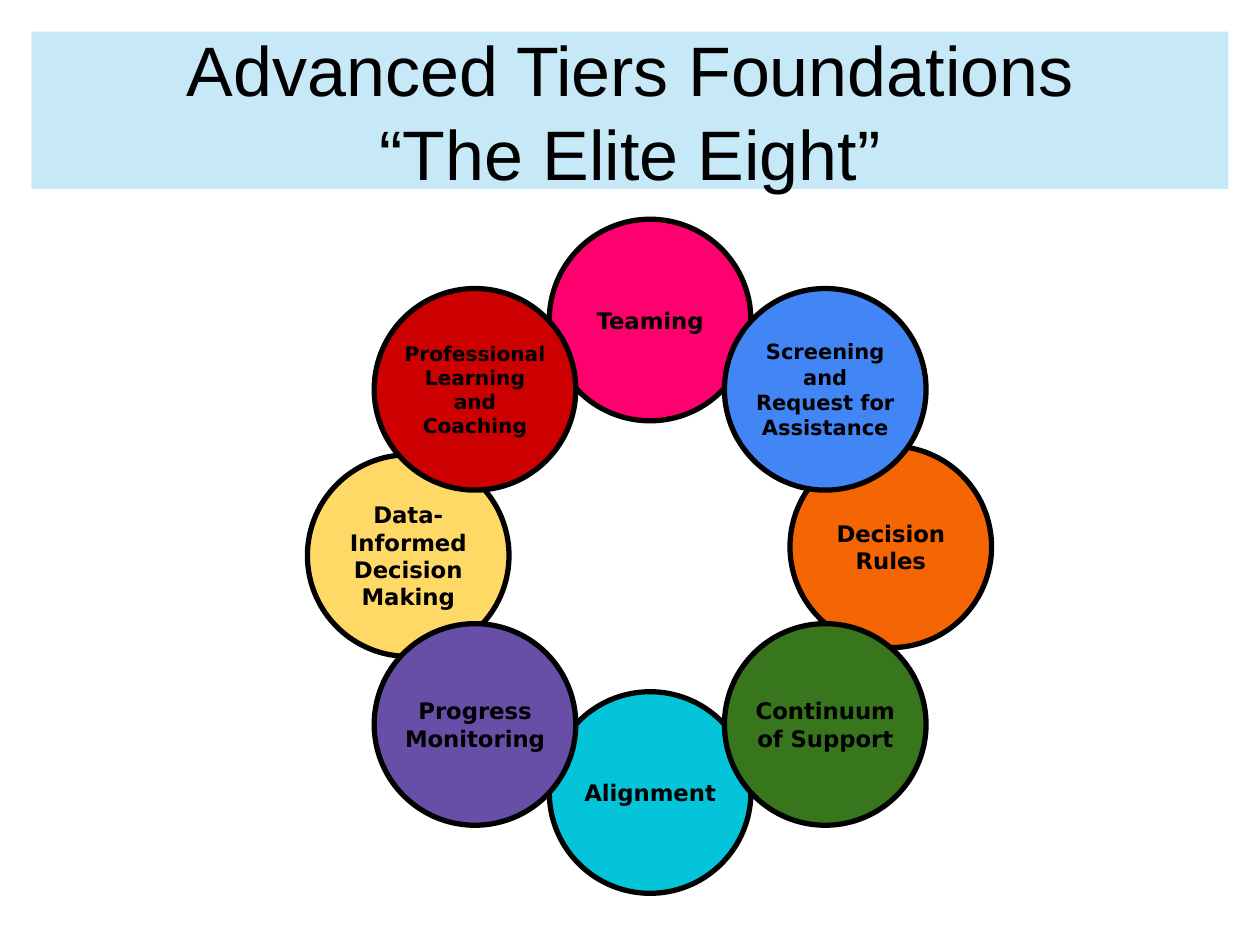
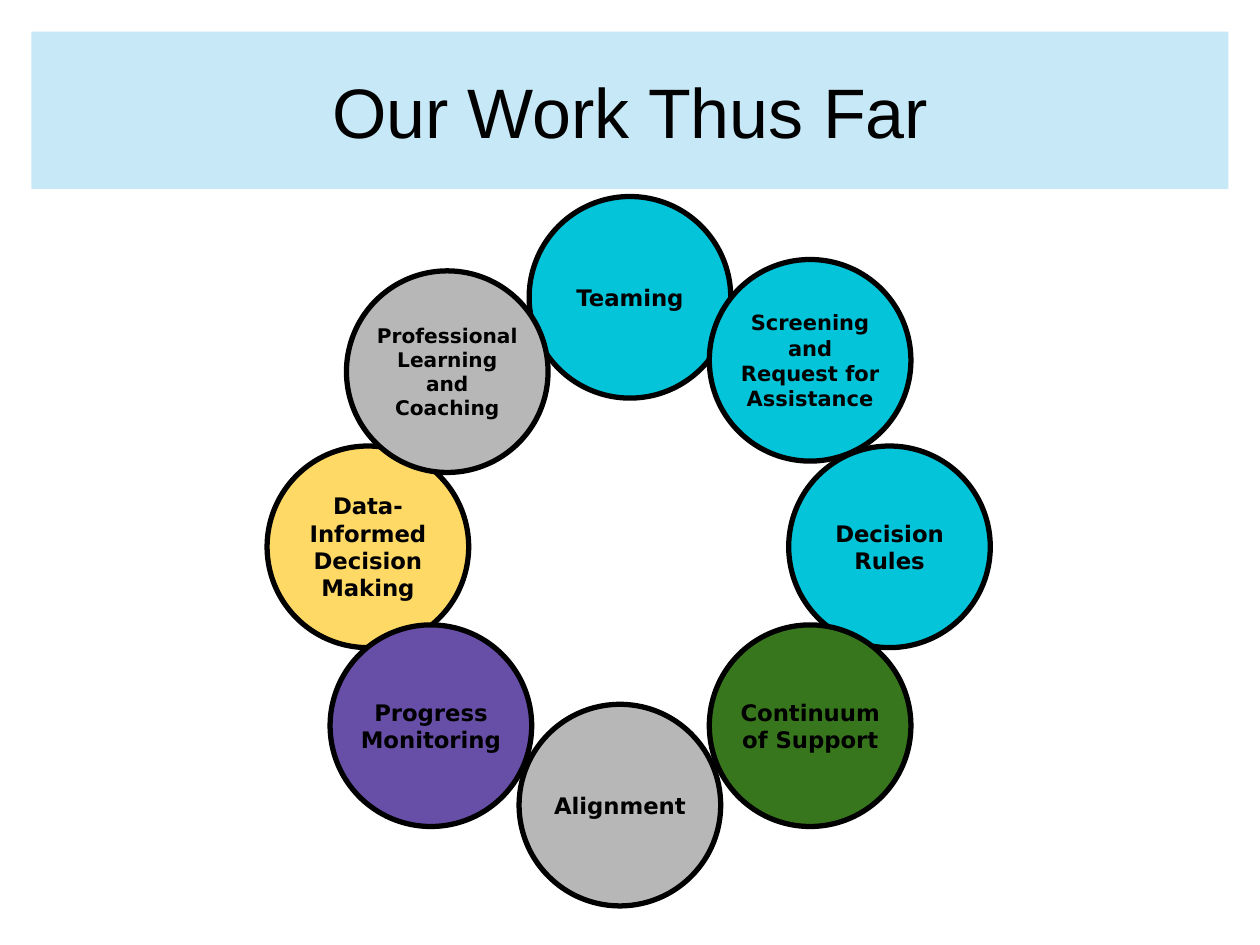
from pptx import Presentation
from pptx.dml.color import RGBColor as RGB
from pptx.enum.shapes import MSO_SHAPE as Kind
from pptx.enum.text import MSO_ANCHOR as Anchor, PP_ALIGN as Align
from pptx.oxml.ns import qn
from pptx.util import Inches, Pt
from lxml import etree

BLACK = RGB(0x00, 0x00, 0x00)
SKY = RGB(0xA9, 0xDC, 0xF2)
PINK = RGB(0xFF, 0x00, 0x6F)
CYAN = RGB(0x04, 0xC4, 0xD9)
ORANGE = RGB(0xF6, 0x65, 0x04)
YELLOW = RGB(0xFF, 0xD9, 0x66)
BLUE = RGB(0x42, 0x85, 0xF4)
RED = RGB(0xCC, 0x00, 0x00)
PURPLE = RGB(0x67, 0x4E, 0xA7)
GREEN = RGB(0x38, 0x76, 0x1D)
GRAY = RGB(0xB7, 0xB7, 0xB7)

SIZE = 1.6

TOPICS = [
    (["Teaming"], 13, 0.1),
    (["Alignment"], 13, 0.1),
    (["Decision Rules"], 13, 0.1),
    (["Data-", "Informed Decision Making"], 13, 0.1),
    (["Screening and Request for Assistance"], 12, 0.1),
    (["Professional Learning and Coaching"], 11.5, 0),
    (["Progress Monitoring"], 13, 0.1),
    (["Continuum of Support"], 13, 0),
]

PAGES = [
    (["Advanced Tiers Foundations", "“The Elite Eight”"], [
        (4.36, 1.74, PINK), (4.36, 5.49, CYAN),
        (6.27, 3.54, ORANGE), (2.44, 3.61, YELLOW),
        (5.75, 2.29, BLUE), (2.97, 2.29, RED),
        (2.97, 4.95, PURPLE), (5.75, 4.95, GREEN),
    ]),
    (["Our Work Thus Far"], [
        (4.2, 1.56, CYAN), (4.12, 5.59, GRAY),
        (6.26, 3.54, CYAN), (2.12, 3.54, YELLOW),
        (5.63, 2.06, CYAN), (2.75, 2.15, GRAY),
        (2.62, 4.96, PURPLE), (5.63, 4.96, GREEN),
    ]),
]


def add_box(slide, kind, box, color):
    shape = slide.shapes.add_shape(kind, *map(Inches, box))
    shape.shadow.inherit = False
    shape.fill.solid()
    shape.fill.fore_color.rgb = color
    return shape


def add_text(shape, lines, font, size, bold, side, top):
    frame = shape.text_frame
    frame.word_wrap = True
    frame.vertical_anchor = Anchor.MIDDLE
    frame.margin_left = frame.margin_right = Inches(side)
    frame.margin_top = frame.margin_bottom = Inches(top)
    for i, line in enumerate(lines):
        para = frame.add_paragraph() if i else frame.paragraphs[0]
        para.alignment = Align.CENTER
        run = para.add_run()
        run.text = line
        run.font.name = font
        run.font.size = Pt(size)
        run.font.bold = bold
        run.font.color.rgb = BLACK


deck = Presentation()
deck.slide_width = Inches(10)
deck.slide_height = Inches(7.5)

for title, spots in PAGES:
    slide = deck.slides.add_slide(deck.slide_layouts[6])
    band = add_box(slide, Kind.RECTANGLE, (0.25, 0.25, 9.5, 1.25), SKY)
    band.line.fill.background()
    tint = next(band.fill._xPr.iter(qn("a:srgbClr")))
    etree.SubElement(tint, qn("a:alpha")).set("val", "65000")
    add_text(band, title, "Arial", 40, False, 0.1, 0.05)

    for (lines, size, top), (x, y, color) in zip(TOPICS, spots):
        disc = add_box(slide, Kind.OVAL, (x, y, SIZE, SIZE), color)
        disc.line.color.rgb = BLACK
        disc.line.width = Pt(3)
        add_text(disc, lines, "DejaVu Sans", size, True, 0, top)

deck.save("out.pptx")
